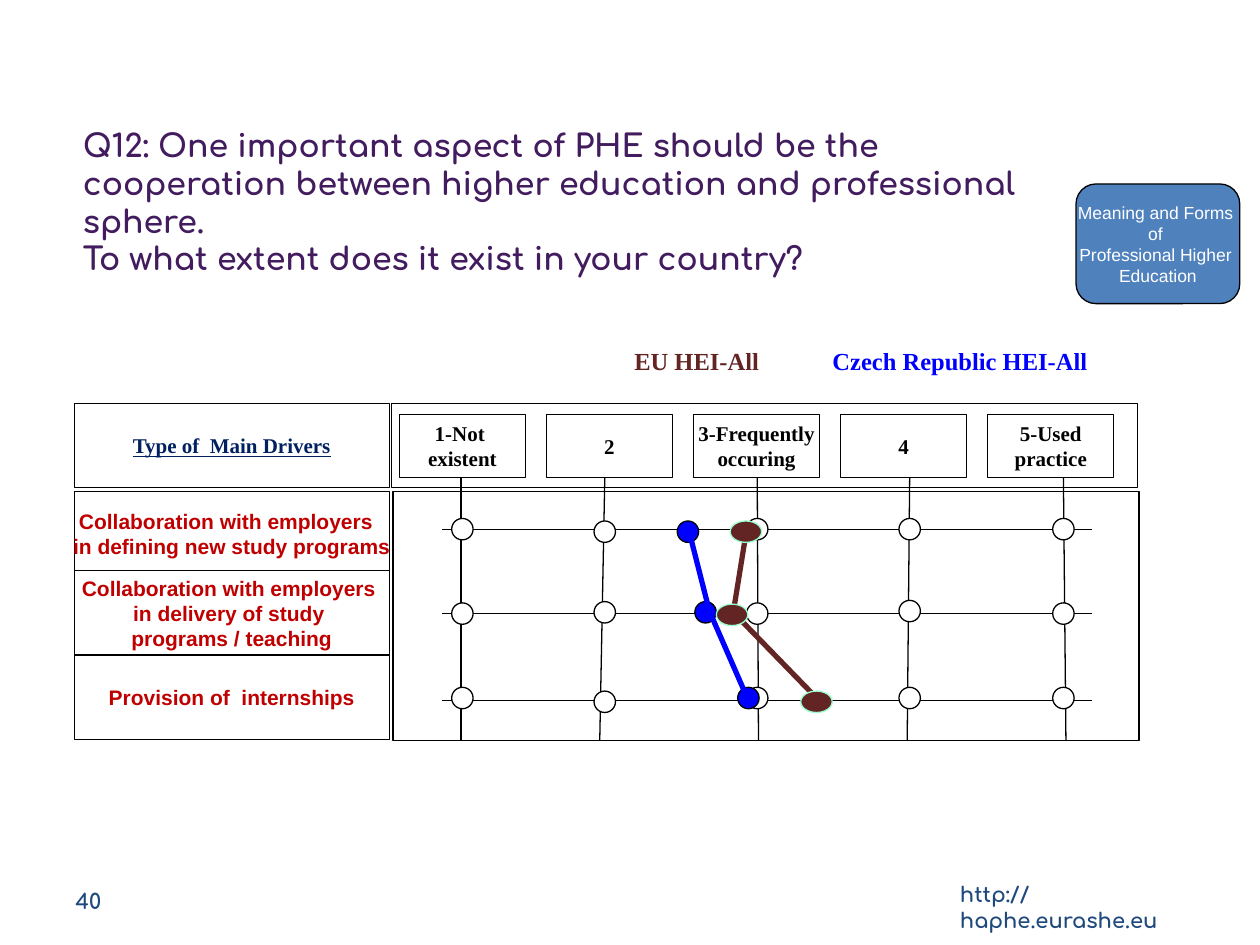
from itertools import pairwise

from lxml import etree
from pptx import Presentation
from pptx.dml.color import RGBColor
from pptx.enum.shapes import MSO_CONNECTOR, MSO_SHAPE
from pptx.enum.text import MSO_ANCHOR, PP_ALIGN
from pptx.oxml.ns import qn
from pptx.util import Inches, Pt

BLACK, WHITE = "000000", "FFFFFF"
BLUE, BROWN, MINT = "0000FF", "632523", "99FFCC"
RED, NAVY, FOOTER, PURPLE, BADGE = "C00000", "002060", "1F497D", "421C5E", "4F81BD"
SERIF, SANS, ROUNDED = "Times New Roman", "Arial", "Comfortaa"
DOT = 0.17


def color(value):
    return RGBColor.from_string(value)


def write(shape, lines, size, face, ink, bold=True, underline=None,
          align=PP_ALIGN.CENTER, anchor=MSO_ANCHOR.MIDDLE, wrap=False):
    frame = shape.text_frame
    frame.word_wrap = wrap
    frame.vertical_anchor = anchor
    for index, line in enumerate(lines):
        para = frame.paragraphs[0] if index == 0 else frame.add_paragraph()
        para.alignment = align
        for part_index, part in enumerate(line.split("\n")):
            if part_index:
                para.add_line_break()
            span = para.add_run()
            span.text = part
            font = span.font
            font.size, font.name, font.bold = Pt(size), face, bold
            font.underline = underline
            font.color.rgb = color(ink)


def add_box(page, box, kind=MSO_SHAPE.RECTANGLE, fill=WHITE, outline=BLACK):
    shape = page.shapes.add_shape(kind, *map(Inches, box))
    shape.shadow.inherit = False
    shape.fill.solid()
    shape.fill.fore_color.rgb = color(fill)
    shape.line.color.rgb = color(outline)
    shape.line.width = Pt(0.75)
    return shape


def add_dot(page, x, y, width=DOT, fill=WHITE, outline=BLACK):
    add_box(page, (x - width / 2, y - DOT / 2, width, DOT), MSO_SHAPE.OVAL, fill, outline)


def add_line(page, start, end, ink=BLACK, width=0.75):
    line = page.shapes.add_connector(
        MSO_CONNECTOR.STRAIGHT, *map(Inches, (*start, *end)))
    line.line.color.rgb = color(ink)
    line.line.width = Pt(width)
    etree.SubElement(line._element.spPr, qn("a:effectLst"))


def add_path(page, points, ink):
    for start, end in pairwise(points):
        add_line(page, start, end, ink, 3)


def add_label(page, box, lines, *style, **options):
    write(page.shapes.add_textbox(*map(Inches, box)), lines, *style, **options)


def add_drivers(page, box):
    """Left column: heading and the three drivers."""
    left, top, width, height = box
    heading = add_box(page, box)
    drivers = [
        (0.70, ["Collaboration with employers  ", "in defining new study programs"]),
        (1.33, ["Collaboration with employers ", "in delivery of study ",
                "programs / teaching"]),
        (2.00, ["Provision of  internships"]),
    ]
    write(heading, ["Type of  Main Drivers"], 12, SERIF, NAVY, underline=True)
    for offset, lines in drivers:
        cell = add_box(page, (left, top + offset, width, height))
        write(cell, lines, 12, SANS, RED)


def add_scale(page, box):
    """Scale headings above the grid."""
    left, top, width, height = box
    add_box(page, box)
    steps = [["1-Not ", "existent"], ["2"], ["3-Frequently", "occuring"],
             ["4"], ["5-Used", "practice"]]
    for index, lines in enumerate(steps):
        step = add_box(page, (left + 0.06 + index * 1.1675, top + 0.09, 1, 0.5))
        write(step, lines, 12, SERIF, BLACK)


def add_grid(page, box):
    """Grid lines with a white dot at every crossing."""
    left, top, width, height = box
    add_box(page, box)
    for offset in (0.30, 0.97, 1.66):
        add_line(page, (left + 0.39, top + offset), (left + 5.55, top + offset))
    # Top x, bottom x, dot x and dot heights of each column
    columns = [
        (0.54, 0.54, 0.55, (0.30, 0.97, 1.64)),
        (1.68, 1.64, 1.68, (0.32, 0.96, 1.67)),
        (2.89, 2.90, 2.89, (0.30, 0.97, 1.64)),
        (4.10, 4.08, 4.10, (0.30, 0.95, 1.64)),
        (5.32, 5.34, 5.32, (0.30, 0.97, 1.64)),
    ]
    for upper, lower, dot, heights in columns:
        add_line(page, (left + upper, top - 0.11), (left + lower, top + height))
        for offset in heights:
            add_dot(page, left + dot, top + offset)


def add_profiles(page, box):
    """Answer profiles of the two groups, over the grid."""
    left, top = box[:2]

    def place(points):
        return [(left + x, top + y) for x, y in points]

    add_path(page, place([(2.80, 0.34), (2.70, 0.96), (3.38, 1.66)]), BROWN)
    for x, y in place([(2.34, 0.32), (2.48, 0.96), (2.82, 1.64)]):
        add_dot(page, x, y, fill=BLUE)
    add_path(page, place([(2.35, 0.32), (2.51, 0.95), (2.82, 1.66)]), BLUE)
    for x, y in place([(2.80, 0.32), (2.69, 0.98), (3.36, 1.67)]):
        add_dot(page, x, y, 0.25, BROWN, MINT)


def add_legend(page, box):
    left, top, width, height = box
    top_aligned = {"anchor": MSO_ANCHOR.TOP}
    add_label(page, (left, top, 1.2, height), ["EU HEI-All"],
              14, SERIF, BROWN, **top_aligned)
    add_label(page, (left + width - 2.24, top, 2.24, height),
              ["Czech Republic HEI-All"], 14, SERIF, BLUE, **top_aligned)


def add_title(page, box):
    add_label(page, box, [
        "Q12: One important aspect of PHE should be the cooperation between "
        "higher education and professional sphere. \n"
        "To what extent does it exist in your country?"],
        18, ROUNDED, PURPLE, align=PP_ALIGN.LEFT, anchor=MSO_ANCHOR.BOTTOM, wrap=True)


def add_badge(page, box):
    badge = add_box(page, box, MSO_SHAPE.ROUNDED_RECTANGLE, BADGE)
    write(badge, ["Meaning and Forms ", "of ", "Professional Higher ", "Education"],
          10, SANS, WHITE, bold=False)


def add_footer(page, box):
    left, top, width, height = box
    style = {"align": PP_ALIGN.LEFT, "anchor": MSO_ANCHOR.TOP, "wrap": True}
    add_label(page, (left, top + 0.05, 1.58, height), ["40"],
              12, ROUNDED, FOOTER, **style)
    add_label(page, (left + width - 2.15, top, 2.15, height),
              ["http://haphe.eurashe.eu"], 12, ROUNDED, FOOTER, **style)


def main():
    deck = Presentation()
    deck.slide_width, deck.slide_height = Inches(10), Inches(7.5)
    page = deck.slides.add_slide(deck.slide_layouts[6])
    grid_box = (3.12, 3.9, 5.92, 1.98)
    add_footer(page, (0.5, 6.95, 9.17, 0.3))
    add_drivers(page, (0.59, 3.2, 2.5, 0.67))
    add_scale(page, (3.11, 3.2, 5.92, 0.67))
    add_grid(page, grid_box)
    add_profiles(page, grid_box)
    add_badge(page, (8.54, 1.46, 1.3, 0.95))
    add_legend(page, (4.93, 2.7, 3.81, 0.34))
    add_title(page, (0.56, 1.69, 7.62, 0.56))
    deck.save("out.pptx")


if __name__ == "__main__":
    main()
